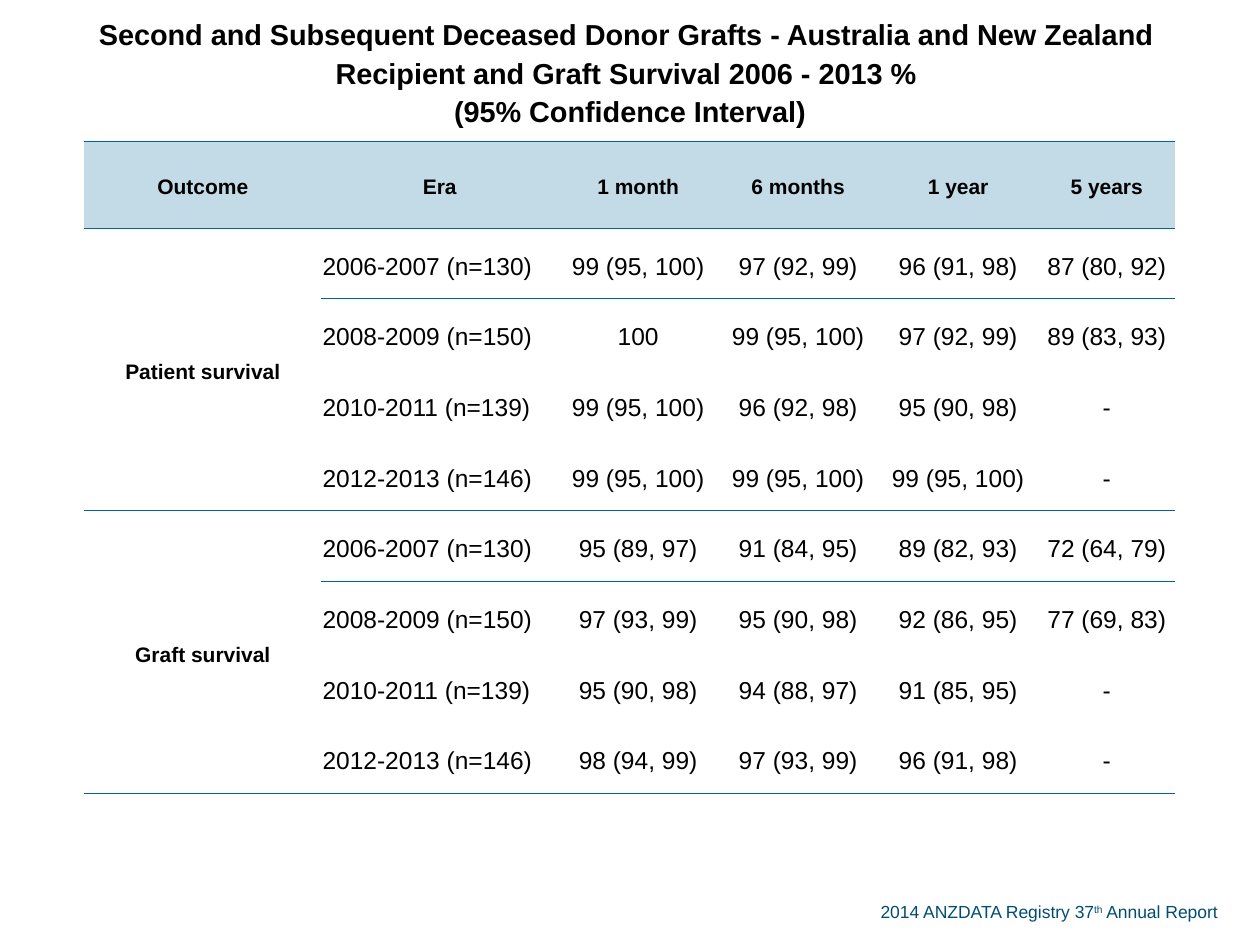
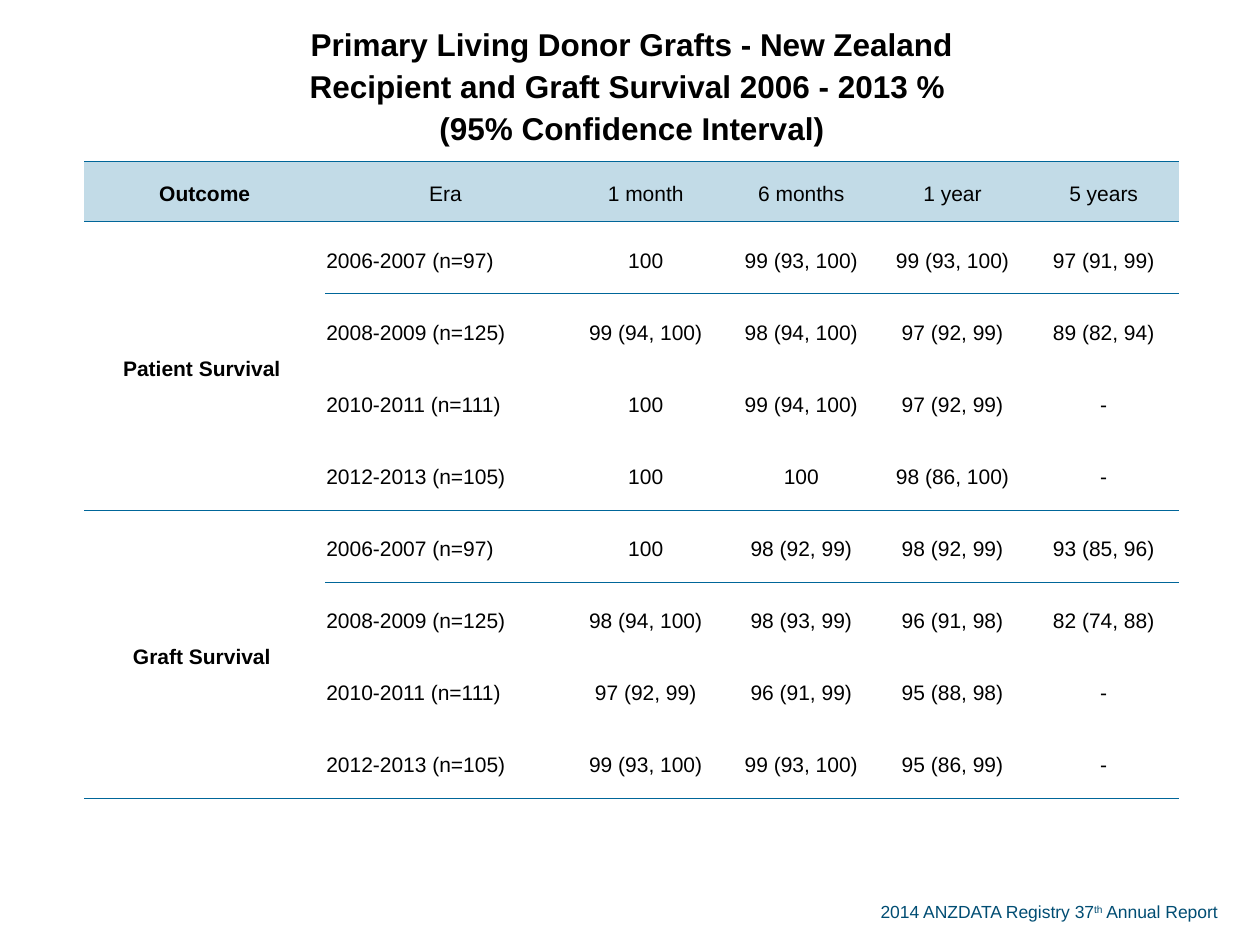
"""Build two slides of graft survival tables with a shared footer."""
import copy

import pptx
import pptx.dml.color
import pptx.enum.text
import pptx.oxml
import pptx.oxml.ns
import pptx.util

Inches = pptx.util.Inches
Pt = pptx.util.Pt
ALIGN = pptx.enum.text.PP_ALIGN
MIDDLE = pptx.enum.text.MSO_ANCHOR.MIDDLE

FONT = "Arial"
BLACK = "000000"
FOOTER_BLUE = "004D73"
RULE_BLUE = "006699"
HEADER_FILL = "C2DBE7"
RULE_WIDTH = 0.5
PLAIN_STYLE = "{2D5ABB26-0587-4C30-8999-92F81FD0307C}"

TABLE_LEFT, TABLE_HEIGHT = 0.67, 6.3
HEADINGS = ["Outcome", "Era", "1 month", "6 months", "1 year", "5 years"]
GROUP_SIZE = 4
FIRST_GROUP_ROW = 2
ROW_COUNT = FIRST_GROUP_ROW + 2 * GROUP_SIZE
RULED_ROWS = {0, 1, FIRST_GROUP_ROW + GROUP_SIZE - 1, ROW_COUNT - 1}
CELL_FORMAT = {
    "vertical_anchor": MIDDLE,
    "margin_left": Inches(0.01),
    "margin_right": Inches(0.01),
    "margin_top": Inches(0.01),
    "margin_bottom": 0,
}

SECOND_GRAFTS = {
    "title": [
        "Second and Subsequent Deceased Donor Grafts - Australia and New Zealand \n"
        "Recipient and Graft Survival 2006 - 2013 % ",
        "(95% Confidence Interval)",
    ],
    "title_size": 16.5,
    "body_size": 14,
    "bold_headings": True,
    "top": 0,
    "columns": [1.88, 1.88, 1.27, 1.27, 1.27, 1.09],
    "top_rows": [1.12, 0.69],
    "eras": ["2006-2007 (n=130)", "2008-2009 (n=150)",
             "2010-2011 (n=139)", "2012-2013 (n=146)"],
    "outcomes": {
        "Patient survival": [
            ["99 (95, 100)", "97 (92, 99)", "96 (91, 98)", "87 (80, 92)"],
            ["100", "99 (95, 100)", "97 (92, 99)", "89 (83, 93)"],
            ["99 (95, 100)", "96 (92, 98)", "95 (90, 98)", "-"],
            ["99 (95, 100)", "99 (95, 100)", "99 (95, 100)", "-"],
        ],
        "Graft survival": [
            ["95 (89, 97)", "91 (84, 95)", "89 (82, 93)", "72 (64, 79)"],
            ["97 (93, 99)", "95 (90, 98)", "92 (86, 95)", "77 (69, 83)"],
            ["95 (90, 98)", "94 (88, 97)", "91 (85, 95)", "-"],
            ["98 (94, 99)", "97 (93, 99)", "96 (91, 98)", "-"],
        ],
    },
}

LIVING_GRAFTS = {
    "title": [
        "Primary Living Donor Grafts - New Zealand\n"
        "Recipient and Graft Survival 2006 - 2013 % ",
        "(95% Confidence Interval)",
    ],
    "title_size": 18,
    "body_size": 12,
    "bold_headings": False,
    "top": 0.04,
    "columns": [1.91, 1.91, 1.27, 1.2, 1.2, 1.2],
    "top_rows": [1.24, 0.48],
    "eras": ["2006-2007 (n=97)", "2008-2009 (n=125)",
             "2010-2011 (n=111)", "2012-2013 (n=105)"],
    "outcomes": {
        "Patient Survival ": [
            ["100", "99 (93, 100)", "99 (93, 100)", "97 (91, 99)"],
            ["99 (94, 100)", "98 (94, 100)", "97 (92, 99)", "89 (82, 94)"],
            ["100", "99 (94, 100)", "97 (92, 99)", "-"],
            ["100", "100", "98 (86, 100)", "-"],
        ],
        "Graft Survival ": [
            ["100", "98 (92, 99)", "98 (92, 99)", "93 (85, 96)"],
            ["98 (94, 100)", "98 (93, 99)", "96 (91, 98)", "82 (74, 88)"],
            ["97 (92, 99)", "96 (91, 99)", "95 (88, 98)", "-"],
            ["99 (93, 100)", "99 (93, 100)", "95 (86, 99)", "-"],
        ],
    },
}


def rgb(color):
    return pptx.dml.color.RGBColor.from_string(color)


def apply_format(target, values):
    for name, value in values.items():
        setattr(target, name, value)


def format_span(span, size, color, bold=False):
    apply_format(span.font, {"name": FONT, "size": Pt(size), "bold": bold})
    span.font.color.rgb = rgb(color)


def write_cell(cell, lines, size, bold=False, align=ALIGN.CENTER, after=14):
    cell.text_frame.text = lines[0]
    for line in lines[1:]:
        cell.text_frame.add_paragraph().text = line
    for para in cell.text_frame.paragraphs:
        apply_format(para, {"alignment": align, "line_spacing": 1.19,
                            "space_after": Pt(after)})
        for span in para.runs:
            format_span(span, size, BLACK, bold)
        for line_break in para._p.findall(pptx.oxml.ns.qn("a:br")):
            line_break.insert(0, copy.deepcopy(para.runs[0]._r.rPr))


def add_rules(cell, edges):
    properties = cell._tc.get_or_add_tcPr()
    for index, edge in enumerate(edges):
        properties.insert(index, pptx.oxml.parse_xml(
            f'<a:{edge} {pptx.oxml.ns.nsdecls("a")} w="{Pt(RULE_WIDTH)}">'
            f'<a:solidFill><a:srgbClr val="{RULE_BLUE}"/></a:solidFill></a:{edge}>'))


def style_cell(cell, row):
    apply_format(cell, CELL_FORMAT)
    if row == 1:
        cell.fill.solid()
        cell.fill.fore_color.rgb = rgb(HEADER_FILL)
    else:
        cell.fill.background()
    last_row = row + cell.span_height - 1 if cell.is_merge_origin else row
    edges = []
    if row - 1 in RULED_ROWS:
        edges.append("lnT")
    if last_row in RULED_ROWS:
        edges.append("lnB")
    add_rules(cell, edges)


def add_grid(page, content):
    widths = content["columns"]
    frame = page.shapes.add_table(
        ROW_COUNT, len(widths), Inches(TABLE_LEFT), Inches(content["top"]),
        Inches(sum(widths)), Inches(TABLE_HEIGHT))
    table = frame.table
    apply_format(table, {"first_row": False, "horz_banding": False})
    table._tbl.tblPr.find(pptx.oxml.ns.qn("a:tableStyleId")).text = PLAIN_STYLE
    body_height = (TABLE_HEIGHT - sum(content["top_rows"])) / (2 * GROUP_SIZE)
    heights = content["top_rows"] + [body_height] * (2 * GROUP_SIZE)
    for column, width in zip(table.columns, widths):
        column.width = Inches(width)
    for row, height in zip(table.rows, heights):
        row.height = Inches(height)
    table.cell(0, 0).merge(table.cell(0, len(widths) - 1))
    for top in range(FIRST_GROUP_ROW, ROW_COUNT, GROUP_SIZE):
        table.cell(top, 0).merge(table.cell(top + GROUP_SIZE - 1, 0))
    for row in range(ROW_COUNT):
        for column in range(len(widths)):
            style_cell(table.cell(row, column), row)
    return table


def add_survival_table(page, content):
    table = add_grid(page, content)
    size = content["body_size"]
    write_cell(table.cell(0, 0), content["title"], content["title_size"], True, after=0)
    for column, heading in enumerate(HEADINGS):
        bold = column == 0 or content["bold_headings"]
        write_cell(table.cell(1, column), [heading], 12, bold)
    for group, (outcome, results) in enumerate(content["outcomes"].items()):
        top = FIRST_GROUP_ROW + group * GROUP_SIZE
        write_cell(table.cell(top, 0), [outcome], 12, True)
        for row, (era, rates) in enumerate(zip(content["eras"], results), top):
            write_cell(table.cell(row, 1), [era], size, align=ALIGN.LEFT)
            for column, rate in enumerate(rates, 2):
                write_cell(table.cell(row, column), [rate], size)


def add_footer(page):
    box = page.shapes.add_textbox(Inches(6.89), Inches(7.1), Inches(2.99), Inches(0.27))
    box.text_frame.word_wrap = True
    para = box.text_frame.paragraphs[0]
    for text, baseline in [("2014 ANZDATA Registry 37", 0), ("th", 30000),
                           (" Annual Report", 0)]:
        span = para.add_run()
        span.text = text
        format_span(span, 10, FOOTER_BLUE)
        span._r.get_or_add_rPr().set("baseline", str(baseline))


def main():
    deck = pptx.Presentation()
    apply_format(deck, {"slide_width": Inches(10), "slide_height": Inches(7.5)})
    for content in (SECOND_GRAFTS, LIVING_GRAFTS):
        page = deck.slides.add_slide(deck.slide_layouts[6])
        add_footer(page)
        add_survival_table(page, content)
    deck.save("out.pptx")


if __name__ == "__main__":
    main()
